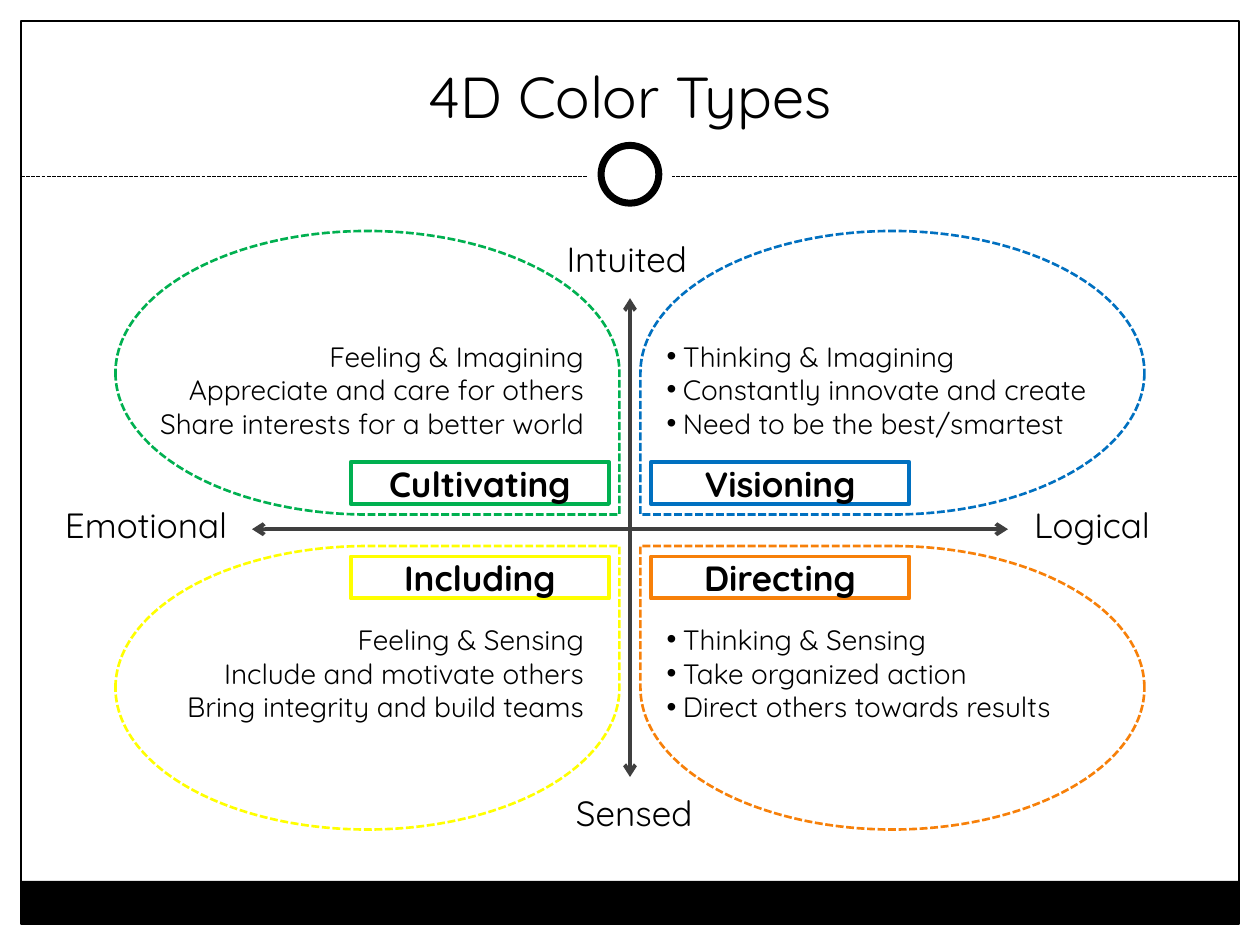
from pptx import Presentation
from pptx.dml.color import RGBColor
from pptx.enum.dml import MSO_LINE
from pptx.enum.shapes import MSO_CONNECTOR, MSO_SHAPE
from pptx.enum.text import MSO_ANCHOR, MSO_AUTO_SIZE, PP_ALIGN
from pptx.oxml.ns import qn
from pptx.util import Inches, Pt
from lxml.etree import SubElement

FONT = "Quicksand"
COLS, ROWS = 120, 90  # grid of twelfths of an inch
COLORS = {
    "ink": "000000", "paper": "FFFFFF", "axis": "3F3F3F",
    "green": "00B050", "blue": "0070C0", "yellow": "FFFF00", "orange": "F78009",
}
# name, color, list width, lines; from top left, row by row
TYPES = [
    ("Cultivating", "green", 44.3, ["Feeling & Imagining",
     "Appreciate and care for others", "Share interests for a better world"]),
    ("Visioning", "blue", 45.7, ["Thinking & Imagining",
     "Constantly innovate and create", "Need to be the best/smartest"]),
    ("Including", "yellow", 41.9, ["Feeling & Sensing",
     "Include and motivate others", "Bring integrity and build teams"]),
    ("Directing", "orange", 40.1, ["Thinking & Sensing",
     "Take organized action", "Direct others towards results"]),
]


def grid(*units):
    return [Inches(unit / 12) for unit in units]


def rgb(name):
    return RGBColor.from_string(COLORS[name])


def stroke(line, color, width, dash=None):
    line.color.rgb = rgb(color)
    line.width = Pt(width)
    if dash:
        line.dash_style = dash


def add_form(slide, kind, box, fill=None, line=None):
    """Add a preset shape; line is (color, width, dash)."""
    form = slide.shapes.add_shape(kind, *grid(*box))
    form.shadow.inherit = False
    if fill:
        form.fill.solid()
        form.fill.fore_color.rgb = rgb(fill)
    else:
        form.fill.background()
    if line:
        stroke(form.line, *line)
    else:
        form.line.fill.background()
    return form


def add_rule(slide, ends, *line, arrows=False):
    rule = slide.shapes.add_connector(MSO_CONNECTOR.STRAIGHT, *grid(*ends))
    stroke(rule.line, *line)
    if arrows:
        for end in ("a:headEnd", "a:tailEnd"):
            SubElement(rule.line._ln, qn(end), type="arrow")
    SubElement(rule._element.spPr, qn("a:effectLst"))


def write(frame, lines, size, align, bold=False):
    for i, line in enumerate(lines):
        par = frame.add_paragraph() if i else frame.paragraphs[0]
        par.text = line
        par.alignment = align
        par.font.name, par.font.size, par.font.bold = FONT, Pt(size), bold
        par.font.color.rgb = rgb("ink")


def add_text(slide, box, lines, size, align):
    frame = slide.shapes.add_textbox(*grid(*box)).text_frame
    frame.word_wrap = False
    frame.auto_size = MSO_AUTO_SIZE.SHAPE_TO_FIT_TEXT
    write(frame, lines, size, align)
    return frame


def add_bullets(frame):
    for par in frame.paragraphs:
        props = par._p.get_or_add_pPr()
        props.set("marL", str(Inches(0.13)))
        props.set("indent", str(-Inches(0.13)))
        SubElement(props, qn("a:buFont"), typeface="Arial")
        SubElement(props, qn("a:buChar"), char="•")


def draw_frame(slide, box):
    """Draw the border, the foot bar and the title band with its ring."""
    x, y, w, h = box
    mid, rule = x + w / 2, y + 14.8
    add_form(slide, MSO_SHAPE.RECTANGLE, (x, y + h - 4.1, w, 4.1), "ink")
    add_form(slide, MSO_SHAPE.RECTANGLE, box, line=("ink", 0.75))
    add_rule(slide, (x, rule, x + w, rule), "ink", 0.75, MSO_LINE.SQUARE_DOT)
    for size, line in ((8, None), (5.5, ("ink", 4))):
        ring = (mid - size / 2, rule - 0.2 - size / 2, size, size)
        add_form(slide, MSO_SHAPE.OVAL, ring, "paper", line)
    title = slide.shapes.add_textbox(*grid(x + 2, y + 1, w - 4, 10)).text_frame
    title.word_wrap = True
    title.vertical_anchor = MSO_ANCHOR.BOTTOM
    write(title, ["4D Color Types"], 33, PP_ALIGN.CENTER)


def draw_axes(slide, box):
    x, y, w, h = box
    mid, level = x + w / 2, y + 22
    add_rule(slide, (mid, y, mid, y + h), "axis", 2.25, arrows=True)
    add_rule(slide, (x, level, x + w, level), "axis", 2.25, arrows=True)
    for name, left, top, wide, align in (
        ("Emotional", x - 19, level - 3, 18.6, PP_ALIGN.LEFT),
        ("Logical", x + w + 1.3, level - 3, 14.3, PP_ALIGN.LEFT),
        ("Intuited", mid - 7.7, y - 6.4, 14.8, PP_ALIGN.CENTER),
        ("Sensed", mid - 6.7, y + h + 0.8, 14.2, PP_ALIGN.CENTER),
    ):
        add_text(slide, (left, top, wide, 5.3), [name], 20, align)


def draw_type(slide, box, kind, right, low):
    """Draw one quadrant, its point and label turned to the center."""
    x, y, w, h = box
    name, color, wide, lines = kind
    tag_w, tag_h = 24.6, 4
    tag_x = x + 1 if right else x + w - 1 - tag_w
    tag_y = y + 1 if low else y + h - 1 - tag_h
    tag = add_form(slide, MSO_SHAPE.RECTANGLE, (tag_x, tag_y, tag_w, tag_h),
                   line=(color, 2.25))
    tag.text_frame.vertical_anchor = MSO_ANCHOR.MIDDLE
    write(tag.text_frame, [name], 20, PP_ALIGN.CENTER, bold=True)

    drop = add_form(slide, MSO_SHAPE.TEAR, box,
                    line=(color, 1.5, MSO_LINE.SQUARE_DOT))
    for flag, turned in (("flipH", right), ("flipV", not low)):
        if turned:
            drop._element.spPr.xfrm.set(flag, "1")

    left = x + 1.3 if right else x + w - 2.2 - wide
    top = y + (6.7 if low else 9.7)
    align = PP_ALIGN.LEFT if right else PP_ALIGN.RIGHT
    frame = add_text(slide, (left, top, wide, 10.9), lines, 16, align)
    if right:
        add_bullets(frame)


def main():
    deck = Presentation()
    deck.slide_width, deck.slide_height = grid(COLS, ROWS)
    slide = deck.slides.add_slide(deck.slide_layouts[6])
    draw_frame(slide, (2, 2, COLS - 4, ROWS - 4))
    draw_axes(slide, (24, 28.4, 72, 45.6))
    for i, kind in enumerate(TYPES):
        low, right = divmod(i, 2)
        draw_type(slide, (11 + 50 * right, 22 + 30 * low, 48, 27),
                  kind, right, low)
    deck.save("out.pptx")


if __name__ == "__main__":
    main()
